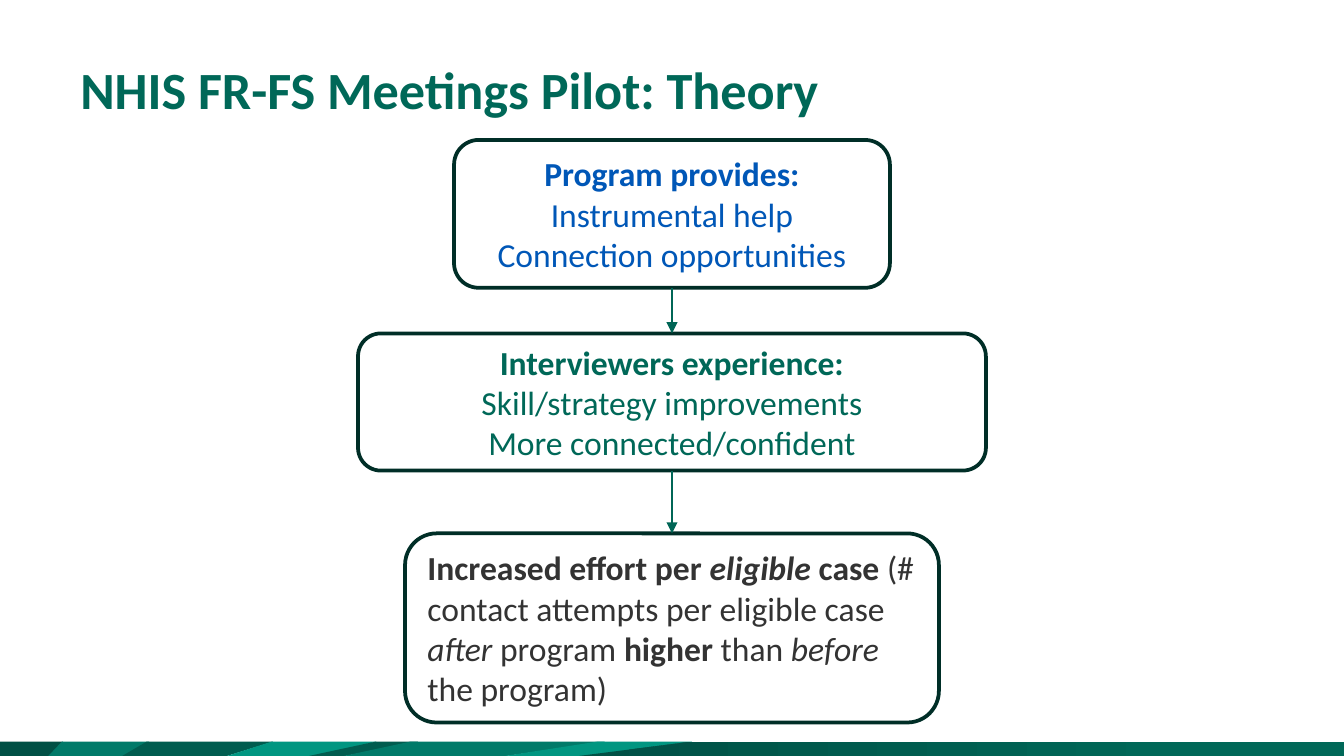
"""Build the slide on the theory behind the NHIS FR-FS meetings pilot."""
import pptx
import pptx.util
import pptx.dml.color
import pptx.enum.shapes
import pptx.enum.text
import pptx.oxml.ns
from lxml import etree

Pt = pptx.util.Pt
RGBColor = pptx.dml.color.RGBColor
ALIGN = pptx.enum.text.PP_ALIGN
ANCHOR = pptx.enum.text.MSO_ANCHOR

FOREST = RGBColor(0x00, 0x50, 0x45)
PINE = RGBColor(0x00, 0x5C, 0x4F)
GREEN = RGBColor(0x00, 0x68, 0x58)
TEAL = RGBColor(0x00, 0x7A, 0x69)
MINT = RGBColor(0x00, 0x96, 0x81)
ARROW = RGBColor(0x00, 0x66, 0x56)
BORDER = RGBColor(0x00, 0x2E, 0x27)
BLUE = RGBColor(0x00, 0x57, 0xB7)
CHARCOAL = RGBColor(0x33, 0x33, 0x33)

FONT = "Calibri"
WIDTH, HEIGHT = 720, 405
BAND_TOP = 397.4

TITLE = "NHIS FR-FS Meetings Pilot: Theory"

# Each run is its text and its style letters: b for bold, i for italic.
STAGES = [
    {"top": 75, "width": 233.5, "height": 79.2, "color": BLUE, "align": ALIGN.CENTER,
     "lines": [[("Program provides:", "b")],
               [("Instrumental help", "")],
               [("Connection opportunities", "")]]},
    {"top": 178.6, "width": 336.4, "height": 73.5, "color": GREEN, "align": ALIGN.CENTER,
     "lines": [[("Interviewers experience:", "b")],
               [("Skill/strategy improvements", "")],
               [("More connected/confident", "")]]},
    {"top": 285.8, "width": 286, "height": 101.3, "color": CHARCOAL, "align": ALIGN.LEFT,
     "lines": [[("Increased effort per ", "b"), ("eligible", "bi"), (" case ", "b"),
                ("(# contact attempts per eligible case ", ""), ("after", "i"),
                (" program ", ""), ("higher", "b"), (" than ", ""),
                ("before", "i"), (" the program)", "")]]},
]

BAND = [
    (0, 33.8, 28.1, 0, FOREST),
    (33.1, 79.9, 66.2, 25.9, TEAL),
    (78.5, 146.2, 121.7, 65.5, PINE),
    (145.4, 201.6, 168.5, 121.7, MINT),
    (200.9, 223.9, 185, 165.6, PINE),
    (219.6, 324, 271.4, 184.3, TEAL),
    (319.7, 370.8, 313.2, 270.7, MINT),
    (370.1, WIDTH, WIDTH, 310.3, None),
]


def add_run(paragraph, words, style, size, color):
    run = paragraph.add_run()
    run.text = words
    run.font.name = FONT
    run.font.size = Pt(size)
    run.font.bold = "b" in style
    run.font.italic = "i" in style
    run.font.color.rgb = color


def add_band(slide):
    for top_left, top_right, bottom_right, bottom_left, color in BAND:
        builder = slide.shapes.build_freeform(Pt(top_left), Pt(BAND_TOP))
        builder.add_line_segments([(Pt(top_right), Pt(BAND_TOP)),
                                   (Pt(bottom_right), Pt(HEIGHT)),
                                   (Pt(bottom_left), Pt(HEIGHT))], close=True)
        facet = builder.convert_to_shape()
        facet.shadow.inherit = False
        facet.line.fill.background()
        if color is not None:
            facet.fill.solid()
            facet.fill.fore_color.rgb = color
            continue
        facet.fill.gradient()
        facet.fill.gradient_angle = 0
        for stop, position, shade in zip(facet.fill.gradient_stops, (0, 0.78), (FOREST, GREEN)):
            stop.position = position
            stop.color.rgb = shade


def add_title(slide):
    frame = slide.shapes.add_textbox(Pt(36), 0, Pt(648), Pt(67.7)).text_frame
    frame.word_wrap = True
    frame.vertical_anchor = ANCHOR.BOTTOM
    frame.paragraphs[0].line_spacing = Pt(30)
    add_run(frame.paragraphs[0], TITLE, "b", 28, GREEN)


def add_stage(slide, stage):
    box = slide.shapes.add_shape(
        pptx.enum.shapes.MSO_SHAPE.ROUNDED_RECTANGLE,
        Pt((WIDTH - stage["width"]) / 2), Pt(stage["top"]),
        Pt(stage["width"]), Pt(stage["height"]))
    box.shadow.inherit = False
    box.fill.background()
    box.line.color.rgb = BORDER
    box.line.width = Pt(2)
    frame = box.text_frame
    frame.word_wrap = True
    frame.vertical_anchor = ANCHOR.MIDDLE
    for index, line in enumerate(stage["lines"]):
        paragraph = frame.add_paragraph() if index else frame.paragraphs[0]
        paragraph.alignment = stage["align"]
        for words, style in line:
            add_run(paragraph, words, style, 18, stage["color"])
    return box


def add_arrow(slide, cause, effect):
    arrow = slide.shapes.add_connector(pptx.enum.shapes.MSO_CONNECTOR.STRAIGHT, 0, 0, 0, 0)
    arrow.begin_connect(cause, 2)
    arrow.end_connect(effect, 0)
    arrow.line.color.rgb = ARROW
    arrow.line.width = Pt(0.75)
    qn = pptx.oxml.ns.qn
    properties = arrow.element.spPr
    etree.SubElement(properties.find(qn("a:ln")), qn("a:tailEnd"), type="triangle")
    etree.SubElement(properties, qn("a:effectLst"))


def main():
    deck = pptx.Presentation()
    deck.slide_width, deck.slide_height = Pt(WIDTH), Pt(HEIGHT)
    slide = deck.slides.add_slide(deck.slide_layouts[6])
    add_band(slide)
    add_title(slide)
    boxes = [add_stage(slide, stage) for stage in STAGES]
    for cause, effect in zip(boxes, boxes[1:]):
        add_arrow(slide, cause, effect)
    deck.save("out.pptx")


if __name__ == "__main__":
    main()
